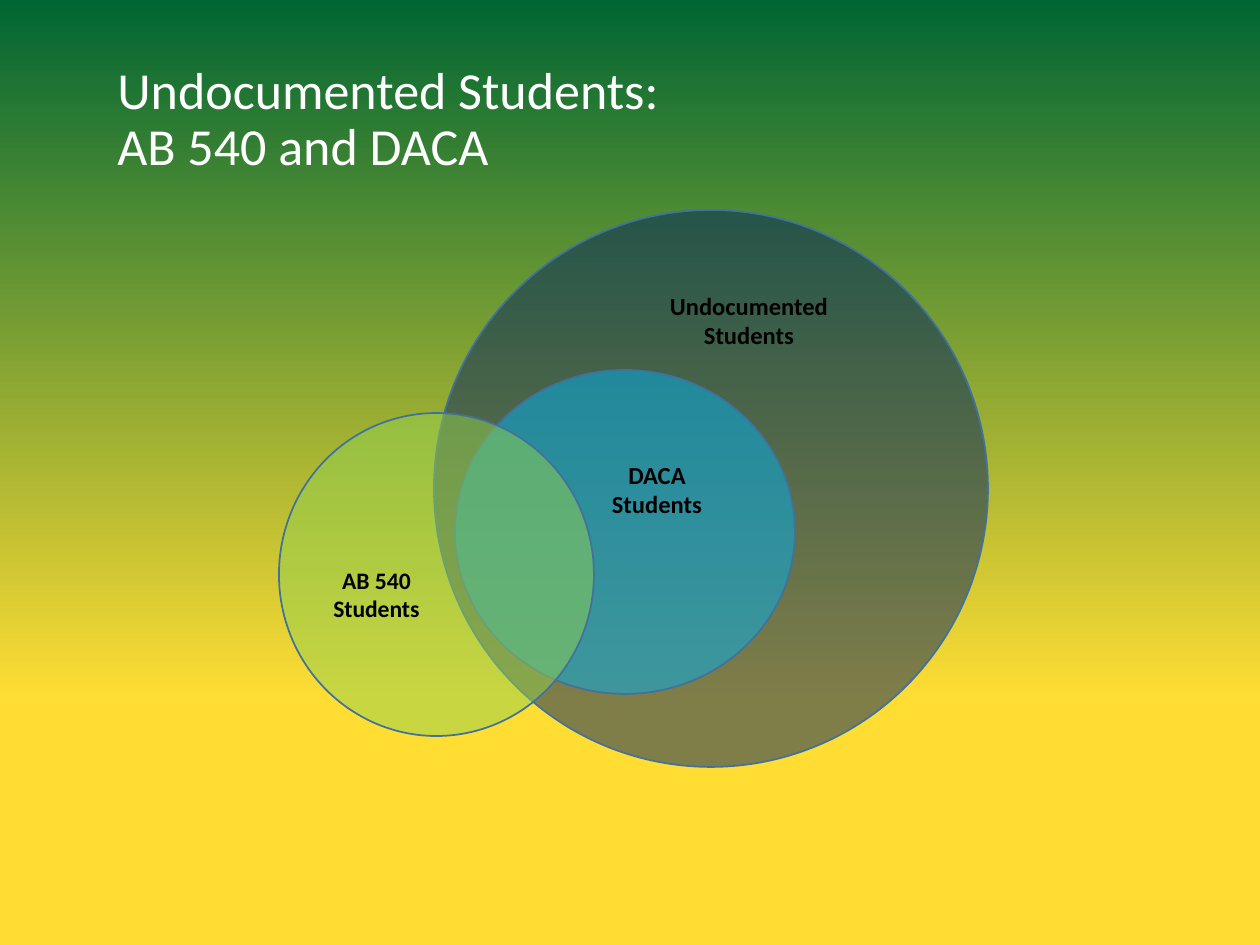
import dataclasses

import pptx
import pptx.dml.color
import pptx.enum.shapes
import pptx.enum.text
import pptx.oxml.ns
import pptx.util
from lxml import etree

EMU_PER_PX = 914400 / 126


def px(length):
    return pptx.util.Emu(round(length * EMU_PER_PX))


def rgb(value):
    return pptx.dml.color.RGBColor.from_string(value)


@dataclasses.dataclass(frozen=True)
class Theme:
    font: str = "Calibri"
    title_size: float = 29.7
    label_size: float = 14
    small_label_size: float = 13.5
    title_color: str = "FFFFFF"
    label_color: str = "000000"
    outline: str = "42719C"
    background_top: str = "006633"
    background_bottom: str = "FFDD33"
    undocumented: str = "002060"
    daca: str = "00B0F0"
    ab540: str = "92D050"


class SlideBuilder:
    def __init__(self, slide, theme):
        self.slide = slide
        self.theme = theme

    def background(self):
        fill = self.slide.background.fill
        fill.gradient()
        fill.gradient_angle = 270
        stops = ((0, self.theme.background_top), (0.74, self.theme.background_bottom))
        for stop, (position, color) in zip(fill.gradient_stops, stops):
            stop.position = position
            stop.color.rgb = rgb(color)

    def circle(self, box, color, opacity=50):
        shape = self.slide.shapes.add_shape(
            pptx.enum.shapes.MSO_SHAPE.OVAL, *map(px, box))
        shape.shadow.inherit = False
        shape.fill.solid()
        shape.fill.fore_color.rgb = rgb(color)
        # Transparency is an alpha child of the fill colour
        color_element = shape._element.spPr.find(
            ".//" + pptx.oxml.ns.qn("a:srgbClr"))
        etree.SubElement(color_element, pptx.oxml.ns.qn("a:alpha"),
                         val=str(opacity * 1000))
        shape.line.color.rgb = rgb(self.theme.outline)
        shape.line.width = pptx.util.Pt(1)

    def text(self, box, lines, size, color, frame_format, paragraph_format, bold=False):
        frame = self.slide.shapes.add_textbox(*map(px, box)).text_frame
        for name, value in {"word_wrap": True, **frame_format}.items():
            setattr(frame, name, value)
        frame.text = lines
        font_format = {"name": self.theme.font, "size": pptx.util.Pt(size), "bold": bold}
        for paragraph in frame.paragraphs:
            for name, value in paragraph_format.items():
                setattr(paragraph, name, value)
            for run in paragraph.runs:
                for name, value in font_format.items():
                    setattr(run.font, name, value)
                run.font.color.rgb = rgb(color)

    def title(self, box, lines):
        self.text(box, lines, self.theme.title_size, self.theme.title_color,
                  {"vertical_anchor": pptx.enum.text.MSO_ANCHOR.MIDDLE},
                  {"line_spacing": 0.9})

    def label(self, box, lines, size):
        insets = {"margin_left": px(9), "margin_right": px(9),
                  "margin_top": px(5), "margin_bottom": px(5)}
        self.text(box, lines, size, self.theme.label_color, insets,
                  {"alignment": pptx.enum.text.PP_ALIGN.CENTER}, bold=True)


def main():
    presentation = pptx.Presentation()
    presentation.slide_width = px(1260)
    presentation.slide_height = px(945)
    theme = Theme()
    slide = presentation.slides.add_slide(presentation.slide_layouts[6])
    builder = SlideBuilder(slide, theme)

    # Background and title
    builder.background()
    builder.title((105, 53, 955, 136), "Undocumented Students:\vAB 540 and DACA")

    # Overlapping student groups, back to front
    groups = (
        ((434, 210, 554, 557), theme.undocumented,
         (611, 286, 276, 64), "Undocumented\nStudents", theme.label_size),
        ((455, 370, 340, 324), theme.daca,
         (561, 455, 192, 67), "DACA\nStudents", theme.label_size),
        ((279, 413, 315, 323), theme.ab540,
         (320, 561, 113, 67), "AB 540 Students", theme.small_label_size),
    )
    for circle_box, color, label_box, lines, size in groups:
        builder.circle(circle_box, color)
        builder.label(label_box, lines, size)

    presentation.save("out.pptx")


if __name__ == "__main__":
    main()
